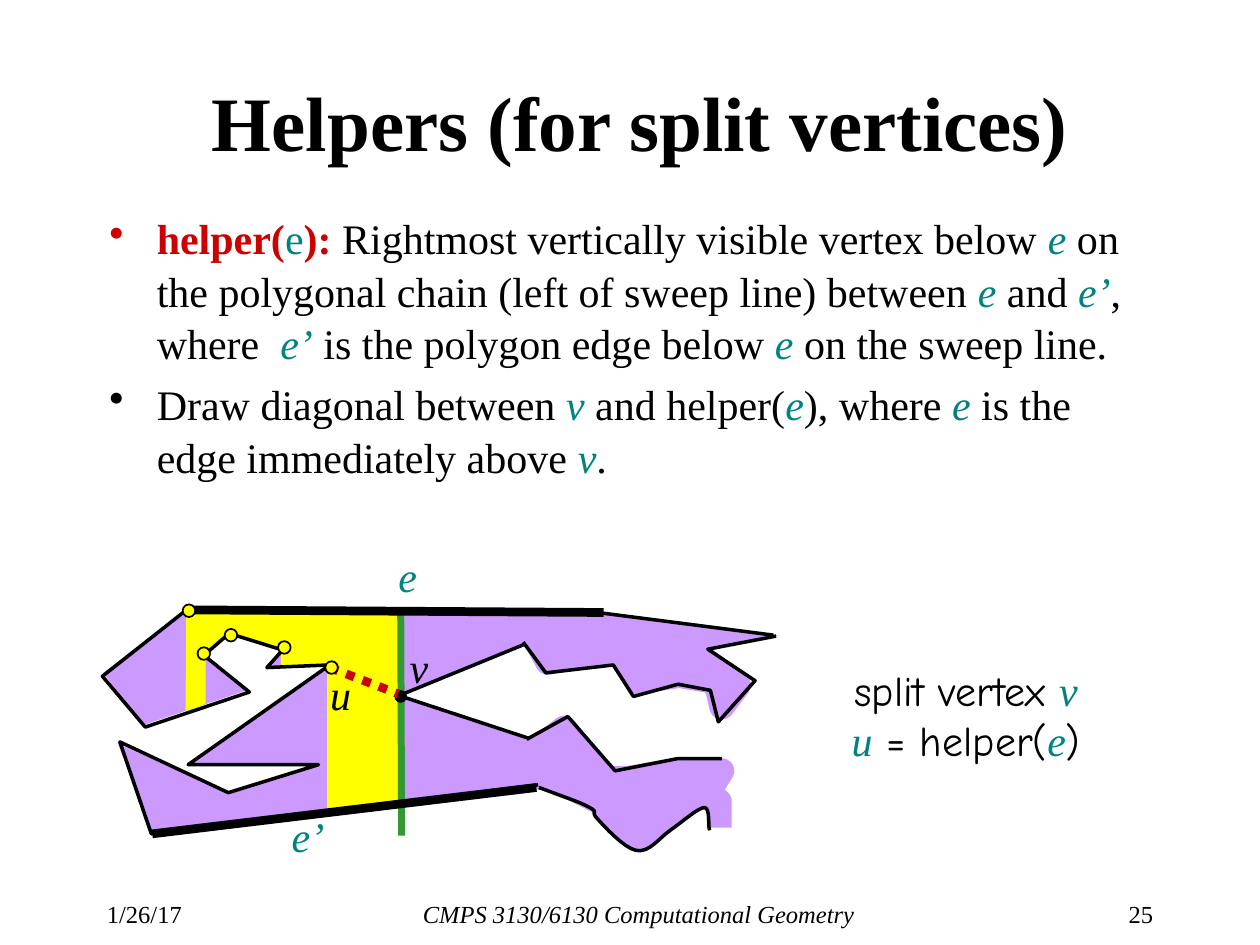
import pptx
import pptx.util
import pptx.dml.color
import pptx.enum.dml
import pptx.enum.shapes
import pptx.enum.text
import pptx.oxml.ns
from dataclasses import dataclass
from lxml import etree

Pt = pptx.util.Pt
ALIGN = pptx.enum.text.PP_ALIGN
SHAPE = pptx.enum.shapes.MSO_SHAPE


@dataclass(frozen=True)
class Theme:
    serif: str = "Times New Roman"
    hand: str = "Comic Neue"
    ink: str = "000000"
    teal: str = "008380"
    red: str = "CC0000"
    lilac: str = "CC99FF"
    yellow: str = "FFFF00"
    green: str = "339933"
    title: int = 44
    body: int = 24
    footer: int = 14
    thin: float = 1
    outline: float = 2
    sweep: float = 4
    thick: float = 5
    band: float = 14.25


T = Theme()


def rgb(color):
    return pptx.dml.color.RGBColor.from_string(color)


def add_text(s, box, paragraphs, size, align=ALIGN.LEFT, font=T.serif):
    """Each paragraph is a list of (text, style) pairs; see style_run."""
    sp = s.shapes.add_textbox(*(Pt(v) for v in box))
    tf = sp.text_frame
    tf.word_wrap = True
    for i, parts in enumerate(paragraphs):
        p = tf.add_paragraph() if i else tf.paragraphs[0]
        p.alignment = align
        for text, style in parts:
            if text == "\n":
                p.add_line_break()
                continue
            r = p.add_run()
            r.text = text
            style_run(r, style, size, font)
    return sp


def style_run(r, style, size, font):
    """Styles: b bold, i italic, t teal, r red; italics are always serif."""
    r.font.name = T.serif if "i" in style else font
    r.font.size = Pt(size)
    r.font.bold = "b" in style
    r.font.italic = "i" in style
    color = T.teal if "t" in style else T.red if "r" in style else T.ink
    r.font.color.rgb = rgb(color)


def paint(sp, fill=None, line=None, width=0):
    sp.shadow.inherit = False
    if fill:
        sp.fill.solid()
        sp.fill.fore_color.rgb = rgb(fill)
    else:
        sp.fill.background()
    if line:
        sp.line.color.rgb = rgb(line)
        sp.line.width = Pt(width)
    else:
        sp.line.fill.background()


def add_path(s, origin, points, closed=False, **look):
    places = [(Pt(origin[0] + x), Pt(origin[1] + y)) for x, y in points]
    builder = s.shapes.build_freeform(*places[0])
    builder.add_line_segments(places[1:], close=closed)
    paint(builder.convert_to_shape(), **look)


def add_line(s, origin, start, end, color, width, dash=None):
    x, y = origin
    c = s.shapes.add_connector(pptx.enum.shapes.MSO_CONNECTOR.STRAIGHT,
                               Pt(x + start[0]), Pt(y + start[1]),
                               Pt(x + end[0]), Pt(y + end[1]))
    c.line.color.rgb = rgb(color)
    c.line.width = Pt(width)
    if dash:
        c.line.dash_style = dash
    etree.SubElement(c._element.spPr, pptx.oxml.ns.qn("a:effectLst"))


def add_dot(s, origin, center, diameter=7.2, **look):
    x, y = (o + c - diameter / 2 for o, c in zip(origin, center))
    sp = s.shapes.add_shape(SHAPE.OVAL, Pt(x), Pt(y), Pt(diameter), Pt(diameter))
    paint(sp, **look)


def bezier(points, steps=8):
    """Points along a chain of cubic curves: a start, then three per curve."""
    out = [points[0]]
    for i in range(0, len(points) - 1, 3):
        a, b, c, d = points[i:i + 4]
        for k in range(1, steps + 1):
            t = k / steps
            u = 1 - t
            out.append(tuple(round(u**3 * a[j] + 3 * u * u * t * b[j] + 3 * u * t * t * c[j]
                                   + t**3 * d[j], 2) for j in (0, 1)))
    return out


def add_title(s, box):
    sp = add_text(s, box, [[("Helpers (for split vertices)", "b")]], T.title)
    sp.text_frame.vertical_anchor = pptx.enum.text.MSO_ANCHOR.MIDDLE


def add_bullets(s, box):
    e, e2, v = ("e", "it"), ("e’", "it"), ("v", "it")
    sp = add_text(s, box, [
        [("helper(", "br"), ("e", "t"), ("): ", "br"),
         ("Rightmost vertically visible vertex below ", ""), e,
         (" on the polygonal chain (left of sweep line) between ", ""), e, (" and ", ""), e2,
         (", where  ", ""), e2, (" is the polygon edge below ", ""), e,
         (" on the sweep line.", "")],
        [("Draw diagonal between ", ""), v, (" and helper(", ""), e, ("), where ", ""), e,
         (" is the edge immediately above ", ""), v, (".", "")],
    ], T.body)
    for p in sp.text_frame.paragraphs:
        p.space_before = Pt(5)
        p.line_spacing = 1.04
        pPr = p._p.get_or_add_pPr()
        pPr.set("marL", str(Pt(27)))
        pPr.set("indent", str(Pt(-27)))
        etree.SubElement(pPr, pptx.oxml.ns.qn("a:buChar")).set("char", "•")


def add_polygon_figure(s, origin):
    polygon = [(48, 38.5), (1, 74.5), (23.5, 104.5), (83, 84.5), (58.5, 64.5), (73, 51.5),
               (103.5, 60), (94.5, 71.5), (130.5, 69.5), (50.5, 126.5), (123.5, 126.5),
               (72.5, 143.5), (9.5, 115), (28.5, 165), (248, 138.5), (240, 120), (169, 87.5),
               (241.5, 58), (267.5, 66), (298.5, 65), (308.5, 76.5), (345, 73), (346, 61),
               (387, 53), (344.5, 48.5), (286, 40.5)]
    lower_patches = [
        [(246, 120.5), (264.5, 106), (287.5, 135), (300, 135), (329.5, 130), (354.5, 130.5),
         (346.5, 143.5), (301.5, 164), (282, 145)],
        [(161, 97.5), (164, 135.5), (243, 130.5), (240, 118.5)]]
    bands = [
        [(163, 135.5), (256.5, 134), (287, 149.5), (295, 159.5), (306.5, 169.5), (336.5, 145),
         (347.5, 143), (353, 148), (353, 163)],
        [(243.5, 118.5), (160, 92), (163, 81.5), (244.5, 48.5), (255, 68.5), (295, 61.5),
         (306.5, 79.5), (330, 76), (351, 79.5), (354.5, 94), (364, 81.5), (332, 57), (341, 55)]]
    visible_region = [(48.5, 38.5), (48, 97.5), (59.5, 92), (59.5, 63), (72.5, 53), (102.5, 61),
                      (102.5, 71), (129, 69.5), (129, 155), (171, 150), (171, 39)]
    lower_chain = bezier([
        (250, 140), (261.5, 144.5), (274, 148.5), (279, 151.5), (284.5, 154.5), (279, 153.5),
        (283.5, 158), (287.5, 162.5), (298.5, 174.5), (305.5, 176), (313, 177.5), (318.5, 169),
        (325, 164.5), (331.5, 160), (341, 151.5), (344.5, 151.5), (348, 151.5), (346.5, 162.5),
        (347.5, 164.5)])
    upper_chain = [(241, 57), (254, 74.5), (292.5, 70), (304, 88), (329.5, 81), (348, 84.5),
                   (352.5, 102.5), (373.5, 79), (346.5, 61), (385.5, 53.5)]
    middle_chain = [(243, 112.5), (266.5, 99.5), (293.5, 130.5), (329.5, 123.5), (354.5, 123.5)]
    left_chain = [(384, 53), (287, 40.5), (110, 40), (48, 39), (0.5, 76.5), (25, 105.5),
                  (84.5, 85.5), (58.5, 64.5), (73, 52), (103.5, 61.5), (94.5, 71.5), (130.5, 70),
                  (49.5, 127), (124, 127), (72.5, 143), (10.5, 114), (28.5, 166.5),
                  (249.5, 138.5)]

    add_path(s, origin, polygon, True, fill=T.lilac)
    for patch in lower_patches:
        add_path(s, origin, patch, True, fill=T.lilac, line=T.lilac, width=T.band)
    for band in bands:
        add_path(s, origin, band, line=T.lilac, width=T.band)
    add_path(s, origin, visible_region, True, fill=T.yellow)
    add_line(s, origin, (172.5, 86.5), (241, 58.5), T.ink, T.outline)
    add_line(s, origin, (170, 87.5), (244.5, 112), T.ink, T.outline)
    for chain in (lower_chain, upper_chain, middle_chain):
        add_path(s, origin, chain, line=T.ink, width=T.outline)
    add_line(s, origin, (171, 40.5), (171.5, 167.5), T.green, T.sweep)
    add_dot(s, origin, (171, 88), fill=T.ink)
    add_path(s, origin, left_chain, line=T.ink, width=T.outline)
    add_line(s, origin, (48.5, 38.5), (287, 40), T.ink, T.thick)
    add_line(s, origin, (29, 166.5), (248.5, 140), T.ink, T.thick)
    add_line(s, origin, (130.5, 71.5), (169.5, 86.5), T.red, T.thick,
             pptx.enum.dml.MSO_LINE.ROUND_DOT)
    for vertex in [(58.5, 63.5), (74, 53), (104.5, 60), (131.5, 71.5), (50, 39)]:
        add_dot(s, origin, vertex, fill=T.yellow, line=T.ink, width=T.thin)
    for text, style, x, y, w, align in [("v", "i", 166, 52, 31, ALIGN.CENTER),
                                        ("u", "i", 123.5, 67.5, 40, ALIGN.LEFT),
                                        ("e", "it", 143.5, 0, 63, ALIGN.CENTER),
                                        ("e’", "it", 86.5, 148.5, 63, ALIGN.CENTER)]:
        sp = add_text(s, (origin[0] + x, origin[1] + y, w, 36), [[(text, style)]], T.body, align)
        sp.text_frame.paragraphs[0].line_spacing = 1.04


def add_legend(s, box):
    add_text(s, box, [[("split vertex ", ""), ("v", "it"), ("\n", ""), ("u", "it"),
                       (" = helper(", ""), ("e", "it"), (")", "")]],
             T.body, ALIGN.CENTER, T.hand)


def add_footer(s, left, top, height):
    for text, style, x, w, align in [
            ("1/26/17", "", 0, 68, ALIGN.LEFT),
            ("CMPS 3130/6130 Computational Geometry", "i", 83, 456, ALIGN.CENTER),
            ("25", "", 553, 59, ALIGN.RIGHT)]:
        add_text(s, (left + x, top, w, height), [[(text, style)]], T.footer, align)


def main():
    prs = pptx.Presentation()
    prs.slide_width, prs.slide_height = Pt(720), Pt(540)
    s = prs.slides.add_slide(prs.slide_layouts[6])
    add_footer(s, 54, 510, 18)
    add_title(s, (114, 24, 594, 90))
    add_bullets(s, (55.5, 117, 612, 324))
    add_polygon_figure(s, (58, 310))
    add_legend(s, (451.5, 376, 201, 65))
    prs.save("out.pptx")


if __name__ == "__main__":
    main()
